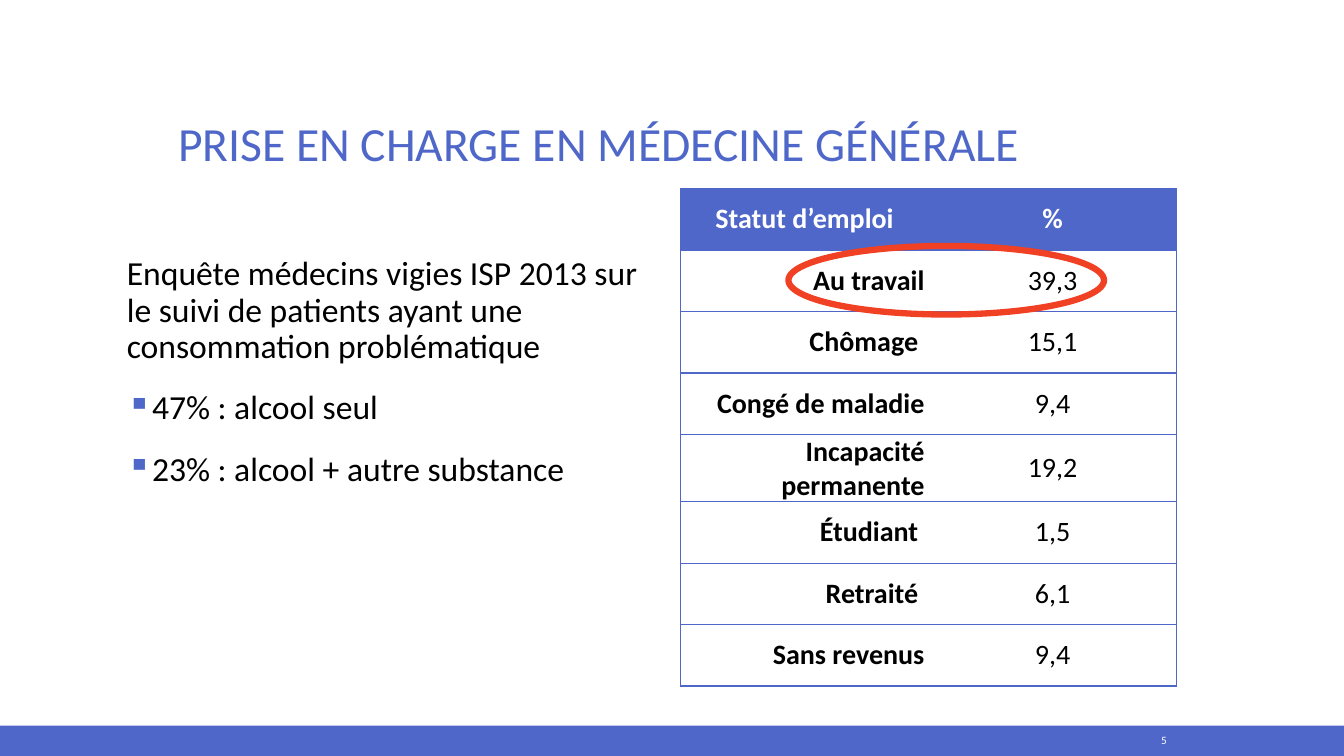
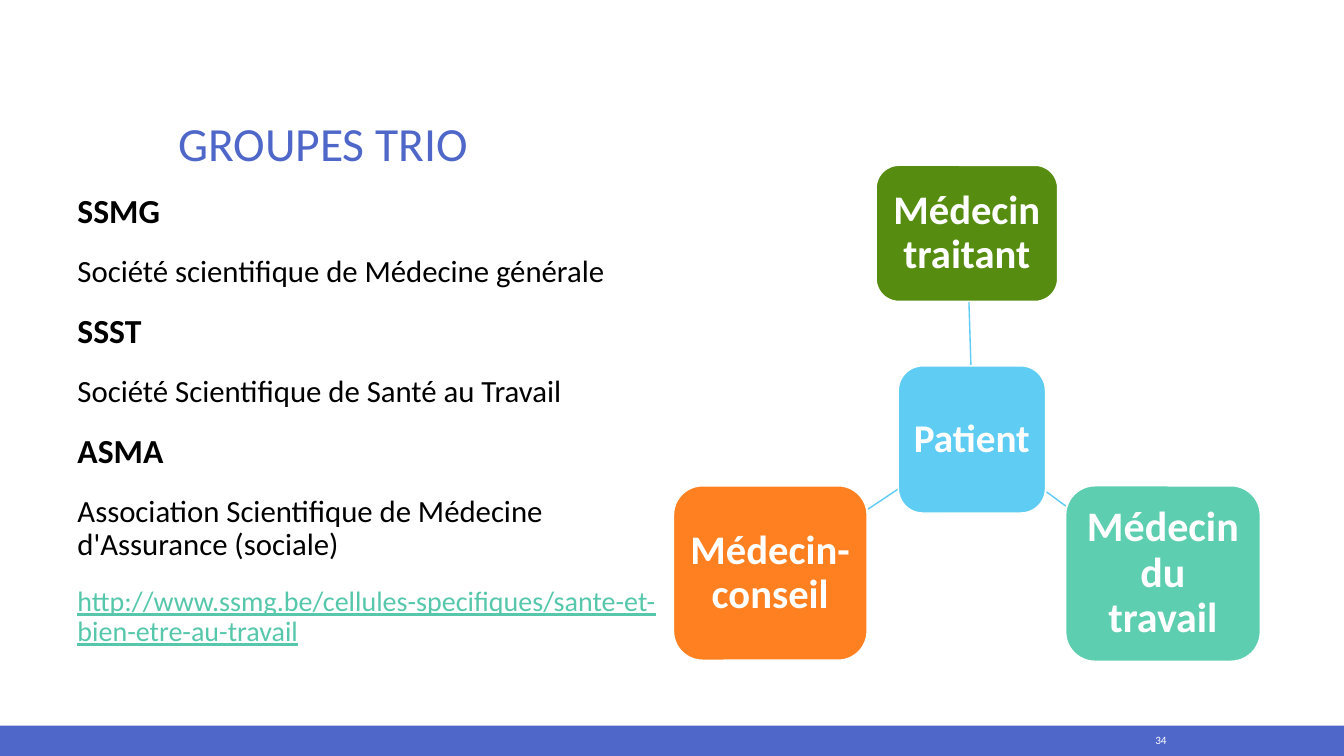
from pptx import Presentation
from pptx.dml.color import RGBColor
from pptx.enum import shapes as sh, text as tx
from pptx.oxml import parse_xml
from pptx.oxml.ns import nsdecls, qn
from pptx.util import Inches, Pt
from lxml import etree

# Shared look
FONT = "Calibri"
BLUE, WHITE, BLACK = "4E67C8", "FFFFFF", "000000"
RED, SKY, LINK = "F14124", "5ECCF3", "56C7AA"
LEFT, MID, RIGHT = tx.PP_ALIGN.LEFT, tx.PP_ALIGN.CENTER, tx.PP_ALIGN.RIGHT
TOP, CENTRE, LOW = tx.MSO_ANCHOR.TOP, tx.MSO_ANCHOR.MIDDLE, tx.MSO_ANCHOR.BOTTOM
INSET = (0.1, 0.05, 0.1, 0.05)

# Content of slide 1
CARE = {
    "title": "PRISE EN CHARGE EN MÉDECINE GÉNÉRALE",
    "page": "5",
    "box": (1.11, 2.5, 5.47, 4.26),
    "body": [
        ("Enquête médecins vigies ISP 2013 sur le suivi de patients "
         "ayant une consommation problématique", {}),
        ("47% : alcool seul", {"bullet": "▪"}),
        ("23% : alcool + autre substance", {"bullet": "▪"}),
    ],
}
JOBS = [
    ("Statut d’emploi", "%"),
    ("Au travail", "39,3"),
    ("Chômage ", "15,1"),
    ("Congé de maladie", "9,4"),
    ("Incapacité permanente", "19,2"),
    ("Étudiant ", "1,5"),
    ("Retraité ", "6,1"),
    ("Sans revenus", "9,4"),
]

# Content of slide 2
HEAD, PLAIN = {"bold": True}, {"size": 22}
TRIO = {
    "title": "GROUPES TRIO",
    "page": "34",
    "box": (0.62, 1.88, 6.01, 4.88),
    "body": [
        ("SSMG", HEAD),
        ("Société scientifique de Médecine générale", PLAIN),
        ("SSST", HEAD),
        ("Société Scientifique de Santé au Travail", PLAIN),
        ("ASMA", HEAD),
        ("Association Scientifique de Médecine d'Assurance (sociale)", PLAIN),
        ("http://www.ssmg.be/cellules-specifiques/sante-et-bien-etre-au-travail",
         {"size": 20, "color": LINK, "under": True}),
    ],
}
NODES = [  # text, size, fill, box
    ("Patient", 28, SKY, (8.91, 3.63, 1.46, 1.46)),
    ("Médecin traitant", 29, "568D11", (8.69, 1.64, 1.8, 1.35)),
    ("Médecin du travail", 30, "5DCEAF", (10.57, 4.82, 1.93, 1.74)),
    ("Médecin-conseil", 29, "FF8021", (6.68, 4.82, 1.92, 1.73)),
]
LINKS = [  # from the patient to each doctor
    (9.63, 3.63, 9.61, 2.99),
    (10.38, 4.88, 10.57, 5.02),
    (8.91, 4.85, 8.61, 5.05),
]


def rgb(code):
    return RGBColor.from_string(code)


def inch(vals):
    return [Inches(v) for v in vals]


def frame(box, anchor=TOP, inset=INSET):
    """Set wrapping, anchor and margins of a text frame."""
    box.word_wrap = True
    box.vertical_anchor = anchor
    (box.margin_left, box.margin_top,
     box.margin_right, box.margin_bottom) = inch(inset)
    return box


def write(par, words, size=24, color=BLACK, bold=False, under=False,
          align=LEFT, line=None, before=None, left=0, bullet=None):
    """Write one formatted paragraph."""
    par.alignment = align
    if line:
        par.line_spacing = line
    if before:
        par.space_before = Pt(before)
    run = par.add_run()
    run.text = words
    font = run.font
    font.name, font.size, font.bold = FONT, Pt(size), bold
    font.underline = under
    font.color.rgb = rgb(color)
    prop = par._p.get_or_add_pPr()
    hang = 0.25 if bullet else 0
    prop.set("marL", str(Inches(left + hang)))
    prop.set("indent", str(-Inches(hang)))
    if bullet:
        tint = etree.SubElement(prop, qn("a:buClr"))
        etree.SubElement(tint, qn("a:srgbClr")).set("val", BLUE)
        etree.SubElement(prop, qn("a:buChar")).set("char", bullet)


def label(slide, box, words, anchor=TOP, **form):
    area = frame(slide.shapes.add_textbox(*inch(box)).text_frame, anchor)
    write(area.paragraphs[0], words, **form)


def shape(slide, kind, box, fill=None, line=None, width=1):
    item = slide.shapes.add_shape(kind, *inch(box))
    item.shadow.inherit = False
    if fill:
        item.fill.solid()
        item.fill.fore_color.rgb = rgb(fill)
    else:
        item.fill.background()
    if line:
        item.line.color.rgb = rgb(line)
        item.line.width = Pt(width)
    else:
        item.line.fill.background()
    return item


def base(deck, data):
    """Add a slide with band, title, body and page number."""
    slide = deck.slides.add_slide(deck.slide_layouts[6])
    shape(slide, sh.MSO_SHAPE.RECTANGLE, (0, 7.2, 13.33, 0.3), BLUE)
    label(slide, (1.67, 0.5, 10, 1.25), data["title"], LOW,
          size=34, color=BLUE, line=0.9)
    body = frame(slide.shapes.add_textbox(*inch(data["box"])).text_frame)
    for i, (words, form) in enumerate(data["body"]):
        par = body.add_paragraph() if i else body.paragraphs[0]
        write(par, words, line=0.9, before=18 if i else None, left=0.05, **form)
    label(slide, (10.82, 7.22, 0.85, 0.25), data["page"], CENTRE,
          size=8, color=WHITE, align=RIGHT)
    return slide


def edges(cell, sides):
    """Draw the named cell borders and clear the others."""
    prop = cell._tc.get_or_add_tcPr()
    for side in "LRTB":
        paint = (f'<a:solidFill><a:srgbClr val="{BLUE}"/></a:solidFill>'
                 if side in sides else "<a:noFill/>")
        prop.append(parse_xml(
            f'<a:ln{side} {nsdecls("a")} w="{Pt(1)}">{paint}</a:ln{side}>'))


def survey(slide):
    """Table of job status, with the working group circled."""
    high = 0.61
    grid = slide.shapes.add_table(
        len(JOBS), 2, *inch((6.75, 1.87, 4.92, high * len(JOBS)))).table
    grid.horz_banding = False
    for r, row in enumerate(JOBS):
        grid.rows[r].height = Inches(high)
        for c, words in enumerate(row):
            cell = grid.cell(r, c)
            edges(cell, "RTB" if c else "LTB")
            cell.fill.solid()
            cell.fill.fore_color.rgb = rgb(WHITE if r else BLUE)
            cell.vertical_anchor = CENTRE
            cell.margin_left = cell.margin_right = Inches(0.04)
            cell.margin_top = cell.margin_bottom = 0
            name = r > 0 and c == 0
            write(cell.text_frame.paragraphs[0], words, size=20,
                  color=BLACK if r else WHITE, bold=r == 0 or c == 0,
                  align=RIGHT if name else MID,
                  left=0.12 if name and r > 1 else 0)
    shape(slide, sh.MSO_SHAPE.OVAL, (7.82, 2.44, 3.13, 0.68),
          line=RED, width=4.5)


def circle(slide):
    """Patient linked to three doctors."""
    for ends in LINKS:
        tie = slide.shapes.add_connector(
            sh.MSO_CONNECTOR.STRAIGHT, *inch(ends))
        tie.line.color.rgb = rgb(SKY)
        tie.line.width = Pt(1)
        etree.SubElement(tie._element.spPr, qn("a:effectLst"))
    for words, size, fill, box in NODES:
        node = shape(slide, sh.MSO_SHAPE.ROUNDED_RECTANGLE, box, fill, WHITE)
        area = frame(node.text_frame, CENTRE, (0.07, 0.08, 0.07, 0.08))
        write(area.paragraphs[0], words, size=size, color=WHITE, bold=True,
              align=MID, line=0.9)


def main():
    deck = Presentation()
    deck.slide_width, deck.slide_height = inch((13.33, 7.5))
    survey(base(deck, CARE))
    circle(base(deck, TRIO))
    deck.save("out.pptx")


if __name__ == "__main__":
    main()
